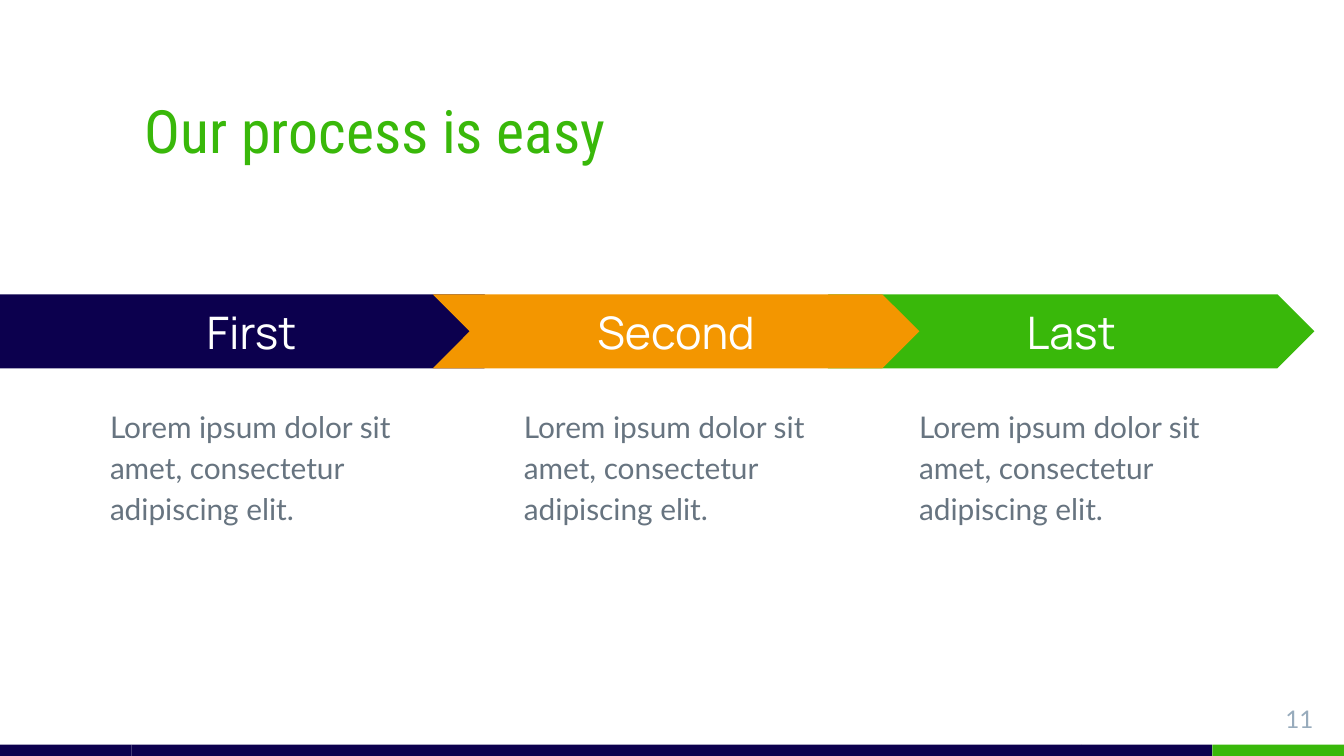
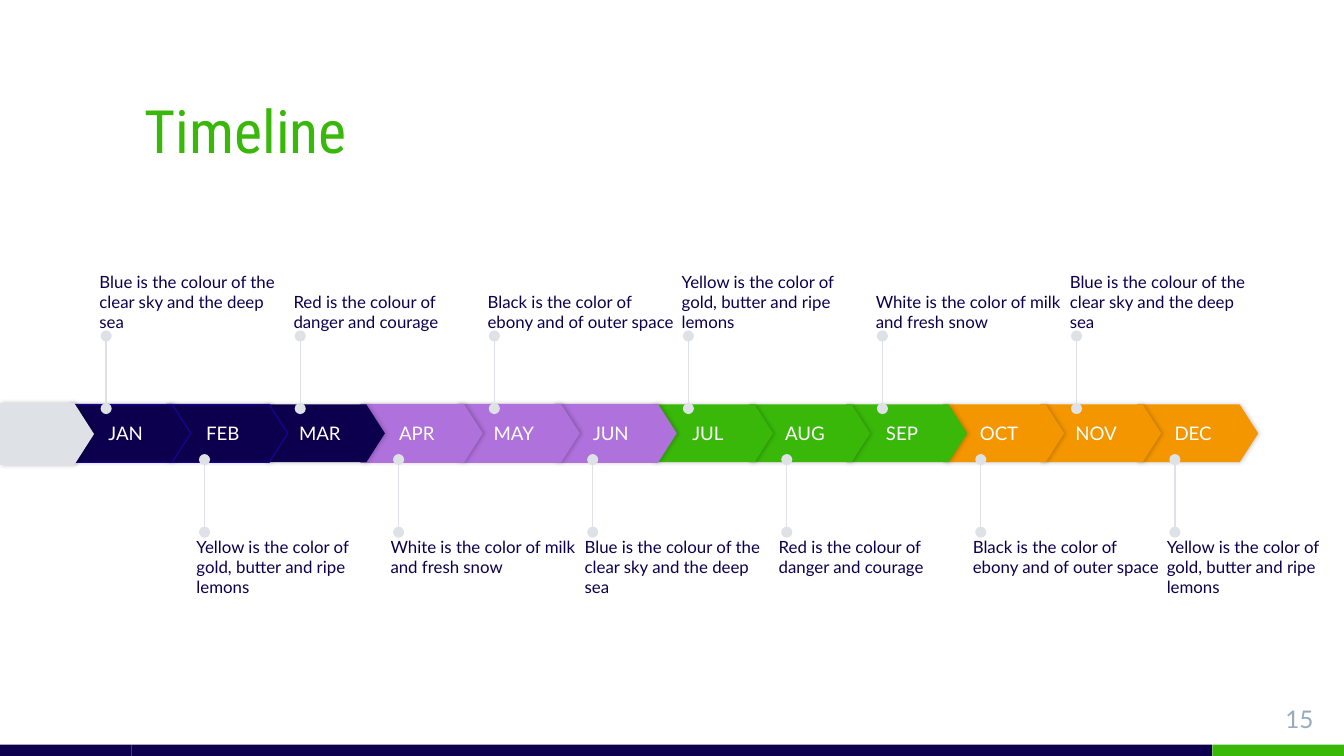
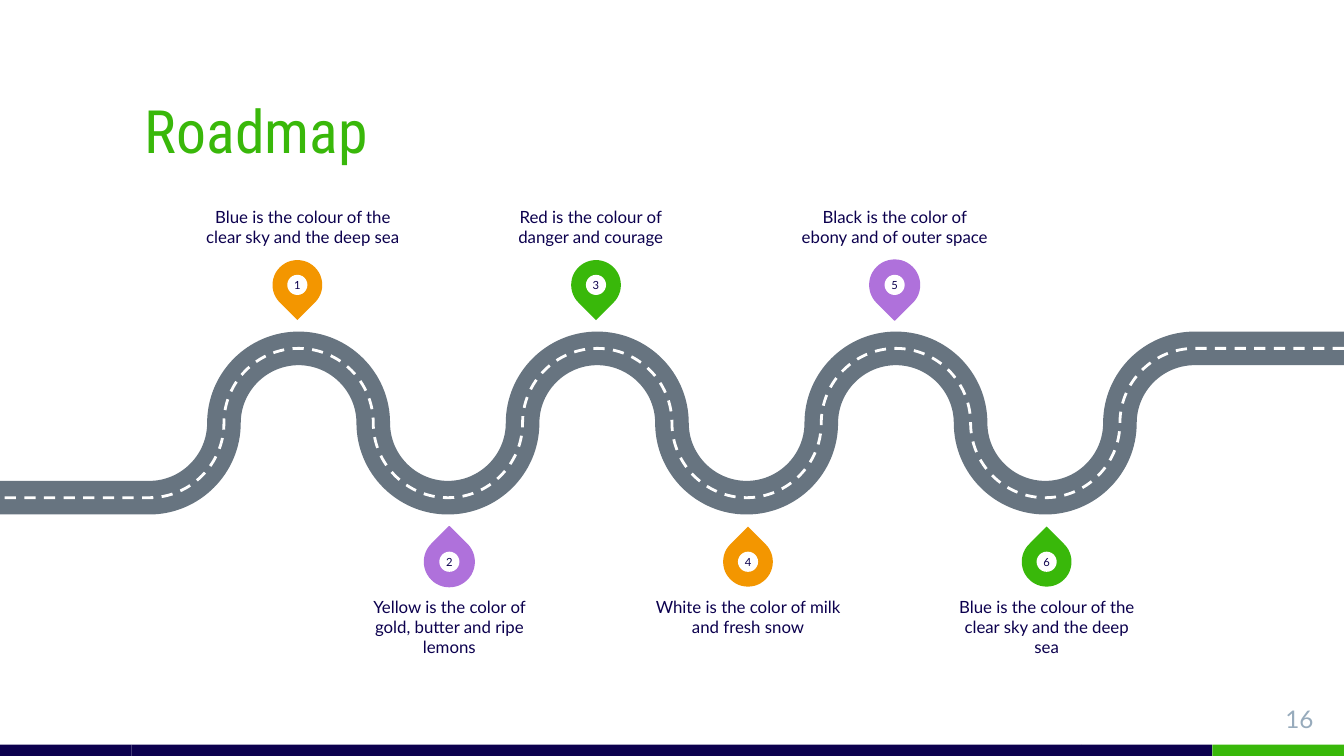
from dataclasses import dataclass, field
from itertools import cycle
from math import cos, pi
from typing import Any, NamedTuple, Optional

from lxml import etree
from pptx import Presentation
from pptx import util as u
from pptx.dml.color import RGBColor
from pptx.enum import dml, shapes, text
from pptx.oxml.ns import qn

# Shared grid: 100 square cells across the slide
COLUMNS = 100
ROWS = 56.25
CELL = u.Inches(0.1)

NAVY, GREEN, ORANGE, PURPLE = "0C004E", "39B80A", "F39600", "AF71DB"
WHITE, SLATE, PALE, MIST, INDIGO = "FFFFFF", "677480", "DEE2E6", "97ABBC", "170096"

KIND = shapes.MSO_SHAPE
TOP, MIDDLE, BOTTOM = text.MSO_ANCHOR.TOP, text.MSO_ANCHOR.MIDDLE, text.MSO_ANCHOR.BOTTOM
LEFT, CENTER, RIGHT = text.PP_ALIGN.LEFT, text.PP_ALIGN.CENTER, text.PP_ALIGN.RIGHT


class Box(NamedTuple):
    """Left, top, width and height in grid cells."""
    left: float
    top: float
    width: float
    height: float


@dataclass(frozen=True)
class TextStyle:
    font: str
    size: float
    color: str
    inset: float = 1
    frame: dict[str, Any] = field(default_factory=dict)
    paragraph: dict[str, Any] = field(default_factory=dict)


TITLE = TextStyle("Roboto Condensed", 32, GREEN, frame={"vertical_anchor": BOTTOM})
PAGE_NUMBER = TextStyle("Lato", 13, MIST, paragraph={"alignment": RIGHT})
STEP_NAME = TextStyle("Manrope", 24, WHITE, 1, {"vertical_anchor": MIDDLE}, {"alignment": CENTER})
STEP_BODY = TextStyle("Lato", 16, SLATE, paragraph={"line_spacing": 1.15})
MONTH_NAME = TextStyle("Lato", 10, WHITE, 0, {"vertical_anchor": MIDDLE}, {"alignment": CENTER})
PIN_NUMBER = TextStyle("Lato", 6, NAVY, 0, {"vertical_anchor": MIDDLE}, {"alignment": CENTER})


def caption_style(above: bool, alignment: Any) -> TextStyle:
    return TextStyle("Lato", 9, NAVY, 0, {"vertical_anchor": BOTTOM if above else TOP},
                     {"alignment": alignment})


# Drawing helpers
def cells(count: float) -> int:
    return round(count * CELL)


def rgb(value: str) -> RGBColor:
    return RGBColor.from_string(value)


def set_all(target: Any, values: dict[str, Any]) -> None:
    for name, value in values.items():
        setattr(target, name, value)


def write(shape: Any, words: str, style: TextStyle) -> None:
    frame = shape.text_frame
    sides = ("margin_left", "margin_top", "margin_right", "margin_bottom")
    set_all(frame, {"word_wrap": True, **dict.fromkeys(sides, cells(style.inset)), **style.frame})
    paragraph = frame.paragraphs[0]
    set_all(paragraph, style.paragraph)
    run = paragraph.add_run()
    run.text = words
    set_all(run.font, {"name": style.font, "size": u.Pt(style.size)})
    run.font.color.rgb = rgb(style.color)


def add_text(canvas: Any, box: Box, words: str, style: TextStyle) -> None:
    write(canvas.add_textbox(*map(cells, box)), words, style)


def add_filled(canvas: Any, kind: Any, box: Box, fill: str, outline: Optional[str] = None,
               adjust: Optional[float] = None) -> Any:
    shape = canvas.add_shape(kind, *map(cells, box))
    shape.shadow.inherit = False
    shape.fill.solid()
    shape.fill.fore_color.rgb = rgb(fill)
    if outline:
        shape.line.color.rgb = rgb(outline)
        shape.line.width = u.Pt(0.75)
    else:
        shape.line.fill.background()
    if adjust is not None:
        shape.adjustments[0] = adjust
    return shape


def cast_shadow(shape: Any) -> None:
    effects = shape._element.spPr.find(qn("a:effectLst"))
    shadow = etree.SubElement(effects, qn("a:outerShdw"), blurRad=str(u.Pt(2.2)),
                              dist=str(u.Pt(0.8)), dir="0", algn="ctr", rotWithShape="0")
    color = etree.SubElement(shadow, qn("a:srgbClr"), val="000000")
    etree.SubElement(color, qn("a:alpha"), val="20000")


def add_stem(canvas: Any, column: float, start: float, end: float) -> None:
    stem = canvas.add_connector(shapes.MSO_CONNECTOR.STRAIGHT,
                                *map(cells, (column, start, column, end)))
    stem.line.color.rgb = rgb(PALE)
    stem.line.width = u.Pt(0.75)
    line = stem.line._get_or_add_ln()
    for tag in ("a:headEnd", "a:tailEnd"):
        etree.SubElement(line, qn(tag), type="oval")
    etree.SubElement(stem._element.spPr, qn("a:effectLst"))


def start_slide(presentation: Any, title: str, number: int) -> Any:
    canvas = presentation.slides.add_slide(presentation.slide_layouts[6]).shapes
    edges = (0, 9.8, 80.5, 90.2, COLUMNS)
    for left, right, fill in zip(edges, edges[1:], (NAVY, NAVY, NAVY, GREEN)):
        add_filled(canvas, KIND.RECTANGLE, Box(left, 55.4, right - left, ROWS - 55.4), fill)
    add_text(canvas, Box(9.8, 3.9, 70.7, 9.4), title, TITLE)
    add_text(canvas, Box(92.7, 51.4, 6, 3.4), str(number), PAGE_NUMBER)
    return canvas


# Process slide
class Step(NamedTuple):
    name: str
    kind: Any
    left: float
    width: float
    body_left: float
    fill: str


STEPS = (  # from back to front
    Step("Last", KIND.CHEVRON, 61.6, 36.2, 67.4, GREEN),
    Step("First", KIND.PENTAGON, 0, 38.8, 7.2, NAVY),
    Step("Second", KIND.CHEVRON, 32.2, 36.2, 38, ORANGE),
)


def build_process(presentation: Any) -> None:
    canvas = start_slide(presentation, "Our process is easy", 11)
    for step in STEPS:
        group = canvas.add_group_shape().shapes
        arrow = add_filled(group, step.kind, Box(step.left, 21.9, step.width, 5.5), step.fill,
                           adjust=0.5)
        write(arrow, step.name, STEP_NAME)
        add_text(group, Box(step.body_left, 29, 24.5, 21.5),
                 "Lorem ipsum dolor sit amet, consectetur adipiscing elit.", STEP_BODY)


# Captions shared by the timeline and the roadmap
BLUE_NOTE = "Blue is the colour of the clear sky and the deep sea"
YELLOW_NOTE = "Yellow is the color of gold, butter and ripe lemons"
RED_NOTE = "Red is the colour of danger and courage"
WHITE_NOTE = "White is the color of milk and fresh snow"
BLACK_NOTE = "Black is the color of ebony and of outer space"
NOTES = (BLUE_NOTE, YELLOW_NOTE, RED_NOTE, WHITE_NOTE, BLACK_NOTE)
NOTE_WIDTH, NOTE_HEIGHT = 14.1, 5.8


# Timeline slide
class Period(NamedTuple):
    months: str
    fill: str
    outline: Optional[str] = None


PERIODS = (
    Period("JAN FEB", NAVY, INDIGO),
    Period("MAR", NAVY),
    Period("APR MAY JUN", PURPLE, PURPLE),
    Period("JUL AUG SEP", GREEN),
    Period("OCT NOV DEC", ORANGE),
)
MONTH_STEP = 7.22
ARROW_POINT = 0.32


def build_timeline(presentation: Any) -> None:
    canvas = start_slide(presentation, "Timeline", 15)
    months = [(name, period) for period in PERIODS for name in period.months.split()]

    # Later months lie behind earlier ones
    for index, (name, period) in reversed(list(enumerate(months))):
        arrow = add_filled(canvas, KIND.PENTAGON, Box(5.2 + index * MONTH_STEP, 30.1, 9, 4.3),
                           period.fill, period.outline, ARROW_POINT)
        cast_shadow(arrow)
        write(arrow, name, MONTH_NAME)
    cast_shadow(add_filled(canvas, KIND.PENTAGON, Box(0, 30, 7, 4.6), PALE, adjust=ARROW_POINT))

    # Captions alternate above and below the arrows
    for index, (_, note) in enumerate(zip(months, cycle(NOTES))):
        above = index % 2 == 0
        left = 7.4 + index * MONTH_STEP
        add_stem(canvas, left + (0.5 if above else 0.6), *((30.4, 25) if above else (39.6, 34.2)))
        add_text(canvas, Box(left, 18.9 if above else 39.9, min(NOTE_WIDTH, COLUMNS - left),
                             NOTE_HEIGHT), note, caption_style(above, LEFT))


# Roadmap slide
class Stop(NamedTuple):
    fill: str
    note: str
    outline: Optional[str] = None
    shift: float = 0
    width: float = NOTE_WIDTH


STOPS = (
    Stop(ORANGE, BLUE_NOTE, shift=0.4, width=14.9),
    Stop(PURPLE, YELLOW_NOTE, PURPLE),
    Stop(GREEN, RED_NOTE, shift=-0.4),
    Stop(ORANGE, WHITE_NOTE),
    Stop(PURPLE, BLACK_NOTE, PURPLE),
    Stop(GREEN, BLUE_NOTE),
)
RADIUS = COLUMNS / 18
ROAD_MIDDLE = 31.48
CURVE_SHARE = 0.55  # handle length of a quarter circle
FIRST_BEND, LAST_BEND = 2, 16


def bend_row(index: int) -> float:
    return ROAD_MIDDLE + RADIUS * cos((index - FIRST_BEND) * pi / 2)


def round_bends(road: Any) -> None:
    """Turn every segment between the two straight ends into a quarter circle."""
    points = [(int(point.get("x")), int(point.get("y")))
              for point in road._element.iter(qn("a:pt"))]
    segments = list(road._element.iter(qn("a:lnTo")))
    for index, segment in enumerate(segments[1:-1], start=1):
        (x1, y1), (x2, y2) = points[index:index + 2]
        across, down = CURVE_SHARE * (x2 - x1), CURVE_SHARE * (y2 - y1)
        if index % 2:
            handles = (x1 + across, y1), (x2, y2 - down)
        else:
            handles = (x1, y1 + down), (x2 - across, y2)
        curve = etree.Element(qn("a:cubicBezTo"))
        for x, y in (*handles, (x2, y2)):
            etree.SubElement(curve, qn("a:pt"), x=str(round(x)), y=str(round(y)))
        segment.getparent().replace(segment, curve)


def add_road(canvas: Any, color: str, width: float, dash: Any = None) -> None:
    bends = [(index * RADIUS, bend_row(index)) for index in range(LAST_BEND, FIRST_BEND - 1, -1)]
    points = [(COLUMNS, bend_row(LAST_BEND)), *bends, (0, bend_row(FIRST_BEND))]
    start, *others = [(cells(x), cells(y)) for x, y in points]
    builder = canvas.build_freeform(*start)
    builder.add_line_segments(others, close=False)
    road = builder.convert_to_shape()
    round_bends(road)
    road.shadow.inherit = False
    road.fill.background()
    road.line.color.rgb = rgb(color)
    set_all(road.line, {"width": u.Pt(width), "dash_style": dash})


def centered(column: float, row: float, size: float) -> Box:
    return Box(column - size / 2, row - size / 2, size, size)


def build_roadmap(presentation: Any) -> None:
    canvas = start_slide(presentation, "Roadmap", 16)
    add_road(canvas, SLATE, 18)
    add_road(canvas, WHITE, 1.5, dml.MSO_LINE.DASH)
    for index, stop in enumerate(STOPS):
        above = index % 2 == 0
        column = (4 + 2 * index) * RADIUS + (-0.1 if above else 0.1)
        row = 21.2 if above else 41.8
        pin = add_filled(canvas, KIND.TEAR, centered(column, row, 3.7), stop.fill, stop.outline, 1)
        pin.rotation = 135 if above else 315
        badge = add_filled(canvas, KIND.OVAL, centered(column, row, 1.5), WHITE)
        write(badge, str(index + 1), PIN_NUMBER)
        add_text(canvas, Box(column + stop.shift - stop.width / 2, 12.6 if above else 44.4,
                             stop.width, NOTE_HEIGHT), stop.note, caption_style(above, CENTER))


def main() -> None:
    presentation = Presentation()
    presentation.slide_width = cells(COLUMNS)
    presentation.slide_height = cells(ROWS)
    for build in (build_process, build_timeline, build_roadmap):
        build(presentation)
    presentation.save("out.pptx")


if __name__ == "__main__":
    main()
